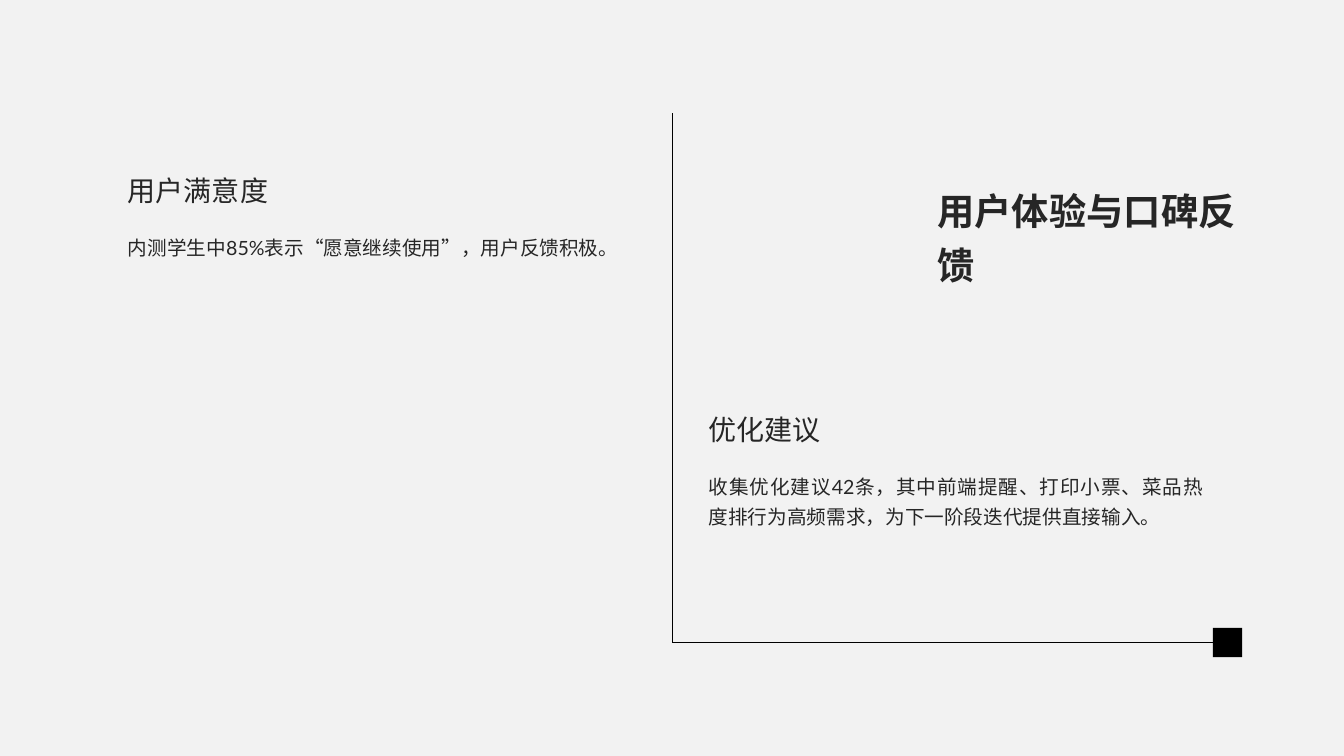
from pptx import Presentation
from pptx import util as u
from pptx.dml.color import RGBColor
from pptx.enum import shapes, text
from pptx.oxml.ns import qn
from lxml import etree

WIDTH, HEIGHT = 13.33, 7.5
FONT, INK, BLACK, PAPER = "Lato", "262626", "000000", "F2F2F2"

TITLE = "用户体验与口碑反馈"
SECTIONS = [
    (1.17, 1.61, "用户满意度", "内测学生中85%表示“愿意继续使用”，用户反馈积极。"),
    (6.93, 3.98, "优化建议",
     "收集优化建议42条，其中前端提醒、打印小票、菜品热度排行为高频需求，为下一阶段迭代提供直接输入。"),
]
AXIS_X, AXIS_TOP, AXIS_BOTTOM = WIDTH / 2, HEIGHT * 0.15, HEIGHT * 0.85
MARKER_LEFT, MARKER_SIZE = 12.03, 0.29
HEADING_HEIGHT, BODY_OFFSET = 0.5, 0.61


def color(value):
    return RGBColor.from_string(value)


def add_text(page, words, left, top, width, height, size, bold=None,
             spacing=1.2, align=None, anchor=text.MSO_ANCHOR.TOP):
    box = page.shapes.add_textbox(*map(u.Inches, (left, top, width, height)))
    frame = box.text_frame
    frame.word_wrap = True
    frame.vertical_anchor = anchor
    para = frame.paragraphs[0]
    para.line_spacing = spacing
    para.alignment = align
    span = para.add_run()
    span.text = words
    span.font.name = FONT
    span.font.size = u.Pt(size)
    span.font.bold = bold
    span.font.color.rgb = color(INK)


def add_line(page, *ends):
    line = page.shapes.add_connector(shapes.MSO_CONNECTOR.STRAIGHT, *map(u.Inches, ends))
    line.line.color.rgb = color(BLACK)
    line.line.width = u.Pt(0.25)
    etree.SubElement(line._element.spPr, qn("a:effectLst"))
    return line


def main():
    deck = Presentation()
    deck.slide_width, deck.slide_height = u.Inches(WIDTH), u.Inches(HEIGHT)
    page = deck.slides.add_slide(deck.slide_layouts[6])
    page.background.fill.solid()
    page.background.fill.fore_color.rgb = color(PAPER)

    add_text(page, TITLE, 9.2, 1.73, 3.4, 1.18, 26.6, bold=True)

    base = add_line(page, MARKER_LEFT, AXIS_BOTTOM, AXIS_X, AXIS_BOTTOM)
    add_line(page, AXIS_X, AXIS_TOP, AXIS_X, AXIS_BOTTOM)
    marker = page.shapes.add_shape(
        shapes.MSO_SHAPE.RECTANGLE, u.Inches(MARKER_LEFT),
        u.Inches(AXIS_BOTTOM - MARKER_SIZE / 2), u.Inches(MARKER_SIZE), u.Inches(MARKER_SIZE))
    marker.shadow.inherit = False
    marker.fill.solid()
    marker.fill.fore_color.rgb = color(BLACK)
    marker.line.fill.background()
    base.begin_connect(marker, 1)

    for left, top, heading, body in SECTIONS:
        add_text(page, heading, left, top, 4.4, HEADING_HEIGHT, 20,
                 anchor=text.MSO_ANCHOR.MIDDLE)
        add_text(page, body, left, top + BODY_OFFSET, 5.1, 1.63, 14,
                 spacing=1.3, align=text.PP_ALIGN.JUSTIFY)

    deck.save("out.pptx")


if __name__ == "__main__":
    main()
